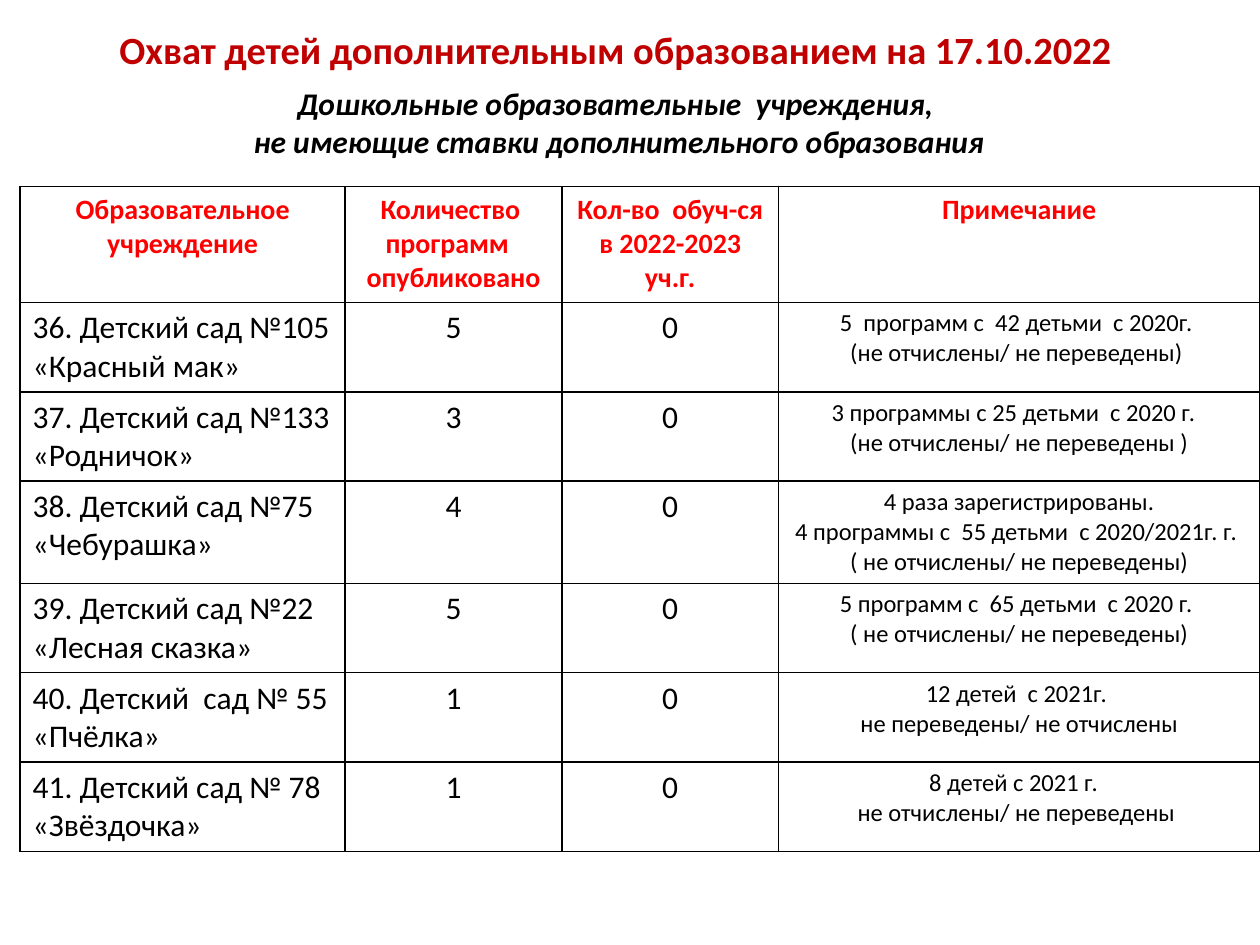
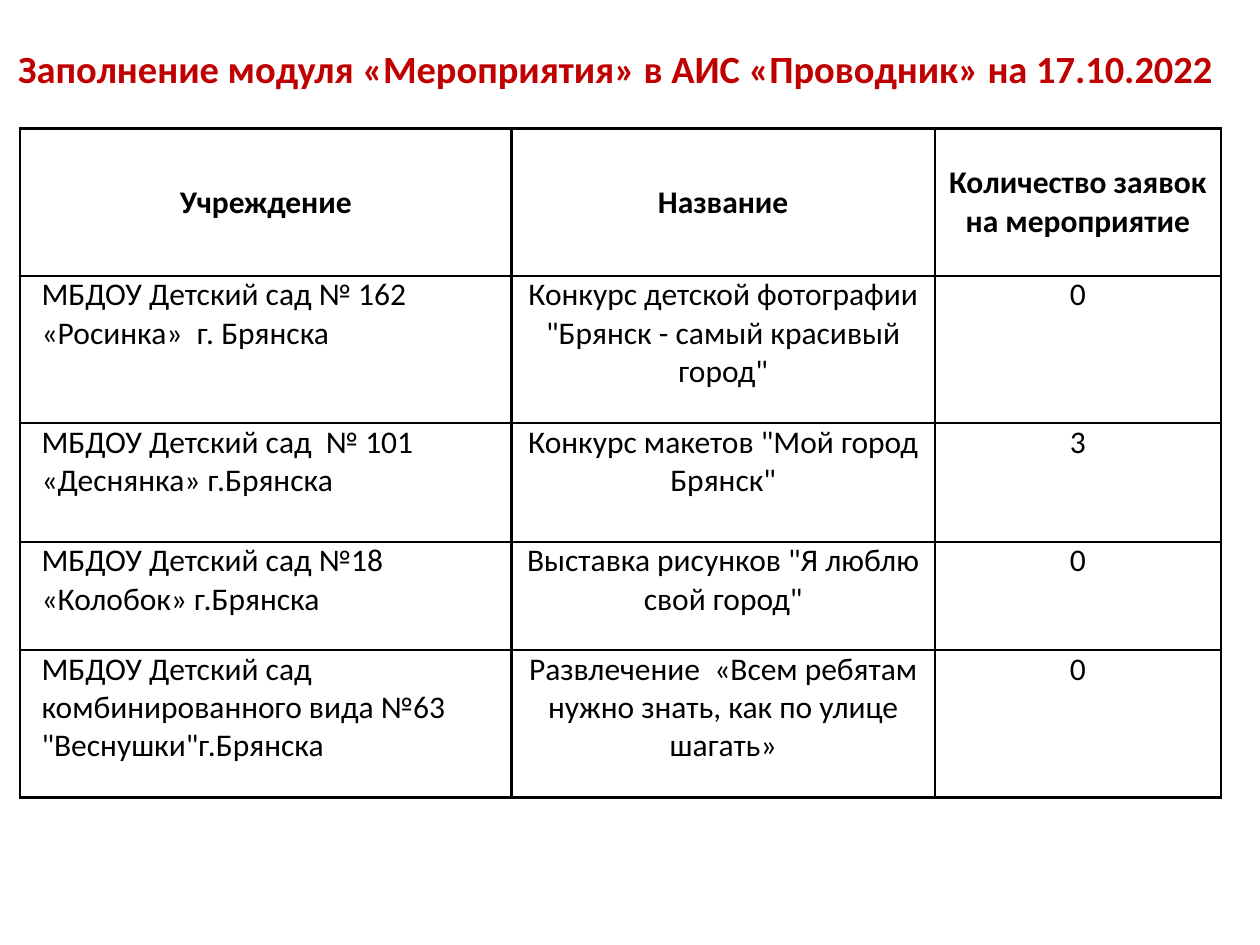
from dataclasses import dataclass
from lxml.etree import SubElement
from pptx import Presentation
from pptx.dml.color import RGBColor
from pptx.enum.text import MSO_ANCHOR, PP_ALIGN
from pptx.oxml.ns import qn
from pptx.util import Inches, Pt


@dataclass(frozen=True)
class Theme:
    font: str = "Calibri"
    title: str = "C00000"
    header: str = "FF0000"
    text: str = "000000"
    paper: str = "FFFFFF"
    title_size: int = 22
    text_size: int = 18
    header_size: int = 16
    note_size: int = 14


THEME = Theme()

COVERAGE_TITLE = "Охват детей дополнительным образованием на 17.10.2022 "
COVERAGE_SUBTITLE = [
    "Дошкольные образовательные  учреждения,",
    " не имеющие ставки дополнительного образования",
]
COVERAGE = [
    ("Образовательное учреждение", "Количество  программ  \nопубликовано",
     "Кол-во  обуч-ся\nв 2022-2023 уч.г.", "Примечание"),
    ("36. Детский сад №105 «Красный мак»", "5", "0",
     "5  программ с  42 детьми  с 2020г. \n(не отчислены/ не переведены) "),
    ("37. Детский сад №133 «Родничок»", "3", "0",
     "3 программы с 25 детьми  с 2020 г.  \n(не отчислены/ не переведены )"),
    ("38. Детский сад №75 «Чебурашка»", "4", "0",
     "4 раза зарегистрированы.\n4 программы с  55 детьми  с 2020/2021г. г. \n"
     "( не отчислены/ не переведены)"),
    ("39. Детский сад №22 «Лесная сказка»", "5", "0",
     "5 программ с  65 детьми  с 2020 г. \n( не отчислены/ не переведены)"),
    ("40. Детский  сад № 55 «Пчёлка»", "1", "0",
     "12 детей  с 2021г. \nне переведены/ не отчислены"),
    ("41. Детский сад № 78 «Звёздочка»", "1", "0",
     "8 детей с 2021 г.  \nне отчислены/ не переведены "),
]

EVENTS_TITLE = "Заполнение модуля «Мероприятия» в АИС «Проводник» на 17.10.2022 "
EVENTS = [
    ("Учреждение", "Название", "Количество заявок на мероприятие"),
    ("МБДОУ Детский сад № 162\n«Росинка»  г. Брянска",
     'Конкурс детской фотографии "Брянск - самый красивый город"', "0"),
    ("МБДОУ Детский сад  № 101\n«Деснянка» г.Брянска",
     'Конкурс макетов "Мой город Брянск"', "3"),
    ("МБДОУ Детский сад №18\n«Колобок» г.Брянска",
     'Выставка рисунков "Я люблю свой город"', "0"),
    ('МБДОУ Детский сад\nкомбинированного вида №63\n"Веснушки"г.Брянска',
     "Развлечение  «Всем ребятам нужно знать, как по улице шагать»", "0"),
]

TABLE_LEFT = 0.16
TITLE_WIDTH, TITLE_HEIGHT = 9.84, 0.47


def write(frame, lines, size, color, bold=False, italic=False, align=PP_ALIGN.CENTER):
    frame.text = "\n".join(lines)
    for para in frame.paragraphs:
        para.alignment = align
        para.font.name = THEME.font
        para.font.size = Pt(size)
        para.font.bold = bold
        para.font.italic = italic
        para.font.color.rgb = RGBColor.from_string(color)


def add_page(deck, title, top):
    page = deck.slides.add_slide(deck.slide_layouts[5])
    box = page.shapes.title
    box.left, box.top = Inches(0), Inches(top)
    box.width, box.height = Inches(TITLE_WIDTH), Inches(TITLE_HEIGHT)
    box.text_frame.vertical_anchor = MSO_ANCHOR.TOP
    write(box.text_frame, [title], THEME.title_size, THEME.title, bold=True)
    return page


def set_borders(cell, widths):
    properties = cell._tc.get_or_add_tcPr()
    for side, width in zip("LRTB", widths):
        line = SubElement(properties, qn(f"a:ln{side}"), w=str(Pt(width)))
        fill = SubElement(line, qn("a:solidFill"))
        SubElement(fill, qn("a:srgbClr"), val=THEME.text)


def add_grid(page, rows, top, widths, heights, line, thin_after=None):
    frame = page.shapes.add_table(
        len(rows), len(widths), Inches(TABLE_LEFT), Inches(top),
        Inches(sum(widths)), Inches(sum(heights)))
    table = frame.table
    table.first_row = table.horz_banding = False
    for column, width in zip(table.columns, widths):
        column.width = Inches(width)
    for row, height in zip(table.rows, heights):
        row.height = Inches(height)
    for r, values in enumerate(rows):
        for c, value in enumerate(values):
            cell = table.cell(r, c)
            left = 0.25 if thin_after == c - 1 else line
            right = 0.25 if thin_after == c else line
            set_borders(cell, (left, right, line, line))
            cell.fill.solid()
            cell.fill.fore_color.rgb = RGBColor.from_string(THEME.paper)
            align = PP_ALIGN.LEFT if r and c == 0 else PP_ALIGN.CENTER
            write(cell.text_frame, value.split("\n"), THEME.text_size, THEME.text,
                  bold=r == 0, align=align)
    return table


def build_coverage(deck):
    page = add_page(deck, COVERAGE_TITLE, 0.16)
    box = page.shapes.add_textbox(Inches(1.02), Inches(0.62), Inches(7.73), Inches(0.71))
    box.text_frame.word_wrap = True
    write(box.text_frame, COVERAGE_SUBTITLE, THEME.text_size, THEME.text,
          bold=True, italic=True)
    heights = [0.92] + [0.81 if row[-1].count("\n") == 2 else 0.71 for row in COVERAGE[1:]]
    table = add_grid(page, COVERAGE, 1.48, [2.58, 1.72, 1.72, 3.82], heights, 1, thin_after=2)
    for c, value in enumerate(COVERAGE[0]):
        write(table.cell(0, c).text_frame, value.split("\n"),
              THEME.header_size, THEME.header, bold=True)
    for r, row in enumerate(COVERAGE[1:], 1):
        write(table.cell(r, 3).text_frame, row[3].split("\n"), THEME.note_size, THEME.text)


def build_events(deck):
    page = add_page(deck, EVENTS_TITLE, 0.31)
    table = add_grid(page, EVENTS, 1.02, [3.9, 3.36, 2.27],
                     [1.17, 1.17, 0.94, 0.86, 1.17], 1.5)
    for r in range(len(EVENTS)):
        for c in range(len(EVENTS[0])):
            cell = table.cell(r, c)
            cell.margin_left = Inches(0.17 if r and c == 0 else 0)
            cell.margin_right = cell.margin_top = cell.margin_bottom = 0
            if r == 0:
                cell.vertical_anchor = MSO_ANCHOR.MIDDLE


def main():
    deck = Presentation()
    deck.slide_width, deck.slide_height = Inches(10), Inches(7.5)
    build_coverage(deck)
    build_events(deck)
    deck.save("out.pptx")


if __name__ == "__main__":
    main()
